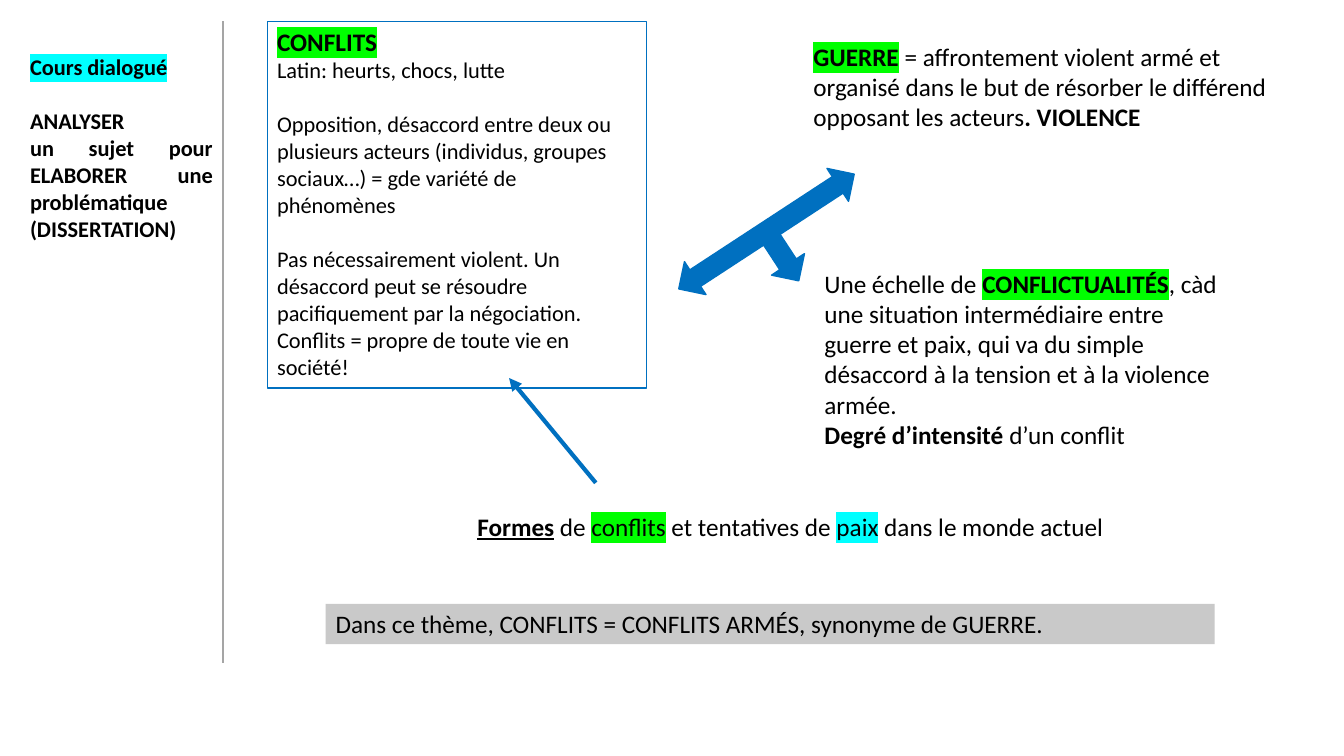
"""Build the slide that sorts out conflict, war and degrees of conflict."""
from pptx import Presentation
from pptx.dml.color import RGBColor
from pptx.enum.shapes import MSO_CONNECTOR as Connector, MSO_SHAPE as Shape
from pptx.enum.text import PP_ALIGN as Align
from pptx.oxml.ns import qn
from pptx.util import Inches, Pt
from lxml.etree import SubElement

BLUE, GREY, SILVER = "0070C0", "A5A5A5", "C9C9C9"
GREEN, CYAN, BLACK = "00FF00", "00FFFF", "000000"
GAP = 19.5

deck = Presentation()
deck.slide_width, deck.slide_height = Inches(13.33), Inches(7.5)
slide = deck.slides.add_slide(deck.slide_layouts[6])


def share(*percents):
    """Turn alternating x and y percentages of the slide into lengths."""
    sides = (deck.slide_width, deck.slide_height)
    return [int(sides[i % 2] * p / 100) for i, p in enumerate(percents)]


def write(paragraph, text, size=18, bold=False, underline=False, mark=None):
    """Add a run of text in the given format."""
    run = paragraph.add_run()
    run.text = text
    font = run.font
    font.size, font.bold, font.underline = Pt(size), bold, underline
    font.color.rgb = RGBColor.from_string(BLACK)
    if mark:
        highlight = SubElement(run._r.get_or_add_rPr(), qn("a:highlight"))
        SubElement(highlight, qn("a:srgbClr"), val=mark)
    font.name = "Calibri"


strong = {"bold": True}
key = {"bold": True, "mark": GREEN}
small = {"size": 16}
task = {"size": 16, "bold": True}

lesson = [
    (0, [("Cours dialogué", {**task, "mark": CYAN})]),
    (GAP, [("ANALYSER", task)]),
    (0, [("un sujet pour ELABORER une problématique", task)]),
    (0, [("(DISSERTATION)", task)]),
]
theme = [
    (0, [("Formes", {"bold": True, "underline": True}), (" de ", {}),
         ("conflits", {"mark": GREEN}), (" et tentatives de ", {}),
         ("paix", {"mark": CYAN}), (" dans le monde actuel", {})]),
]
conflicts = [
    (0, [("CONFLITS", key)]),
    (0, [("Latin: heurts, chocs, lutte", small)]),
    (GAP, [("Opposition, désaccord entre deux ou plusieurs acteurs (individus, "
            "groupes sociaux…) = gde variété de phénomènes", small)]),
    (GAP, [("Pas nécessairement violent. Un désaccord peut se résoudre "
            "pacifiquement par la négociation. Conflits = propre de toute vie "
            "en société!", small)]),
]
war = [
    (0, [("GUERRE", key),
         (" = affrontement violent armé et organisé dans le but de résorber le "
          "différend opposant les acteurs", {}),
         (". VIOLENCE", strong)]),
]
scale = [
    (0, [("Une échelle de ", {}), ("CONFLICTUALITÉS", key),
         (", càd une situation intermédiaire entre guerre et paix, qui va du "
          "simple désaccord à la tension et à la violence armée.", {})]),
    (0, [("Degré d’intensité ", strong), ("d’un conflit", {})]),
]
summary = [
    (0, [("Dans ce thème, CONFLITS = CONFLITS ARMÉS, synonyme de GUERRE.", {})]),
]

blocks = [
    (lesson, (1.5, 6.4, 15.08, 26.5), Align.JUSTIFY, None, None),
    (theme, (29.55, 66.93, 58.5, 5.33), Align.CENTER, None, None),
    (conflicts, (19.88, 2.8, 28.2, 48.53), Align.LEFT, None, BLUE),
    (war, (59.78, 4.8, 35.7, 17.47), Align.LEFT, None, None),
    (scale, (60.6, 34.8, 31.8, 25.6), Align.LEFT, None, None),
    (summary, (24.23, 79.87, 66.15, 5.33), Align.LEFT, SILVER, None),
]
for content, area, align, fill, outline in blocks:
    block = slide.shapes.add_textbox(*share(*area))
    if fill:
        block.fill.solid()
        block.fill.fore_color.rgb = RGBColor.from_string(fill)
    if outline:
        block.line.color.rgb = RGBColor.from_string(outline)
        block.line.width = Pt(0.75)
    frame = block.text_frame
    frame.word_wrap = True
    for index, (gap, runs) in enumerate(content):
        paragraph = frame.add_paragraph() if index else frame.paragraphs[0]
        paragraph.alignment = align
        if gap:
            paragraph.space_before = Pt(gap)
        for text, style in runs:
            write(paragraph, text, **style)

links = [
    ((16.58, 2.8, 16.58, 87.73), GREY, 1, False),
    ((44.33, 63.87, 37.88, 50), BLUE, 3, True),
]
for ends, colour, width, pointed in links:
    link = slide.shapes.add_connector(Connector.STRAIGHT, *share(*ends))
    link.line.color.rgb = RGBColor.from_string(colour)
    link.line.width = Pt(width)
    if pointed:
        SubElement(link.line._get_or_add_ln(), qn("a:tailEnd"), type="triangle")
    SubElement(link._element.spPr, qn("a:effectLst"))

crossroads = slide.shapes.add_shape(
    Shape.LEFT_RIGHT_UP_ARROW, *share(50.03, 27.6, 15.6, 10.4))
crossroads.rotation = 146.8
crossroads.shadow.inherit = False
crossroads.fill.solid()
crossroads.fill.fore_color.rgb = RGBColor.from_string(BLUE)
crossroads.line.color.rgb = RGBColor.from_string(BLUE)
crossroads.line.width = Pt(1)

deck.save("out.pptx")
